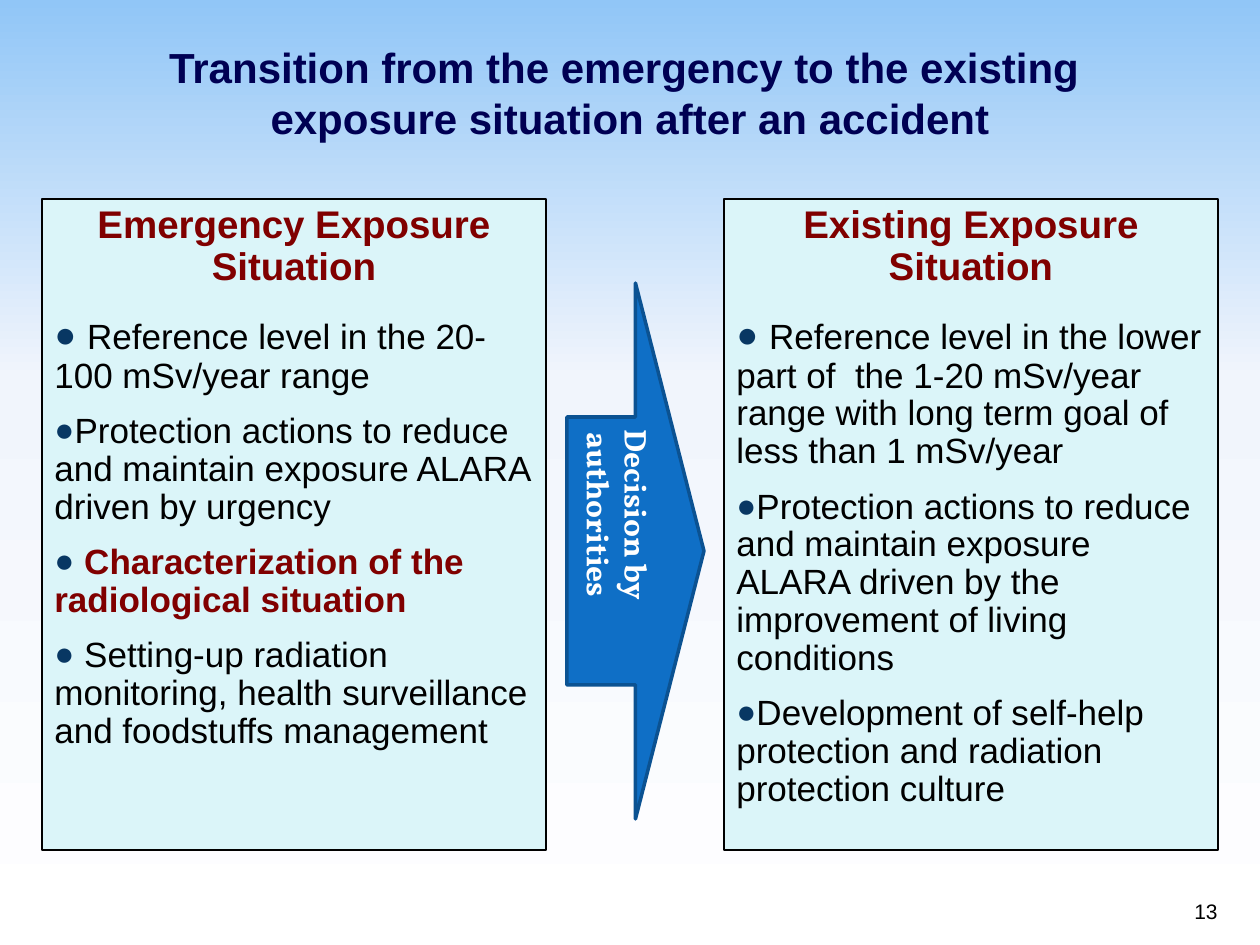
from copy import deepcopy

from lxml import etree
from pptx import Presentation
from pptx import util as u
from pptx.dml.color import RGBColor
from pptx.enum import shapes, text
from pptx.oxml.ns import qn

PX = 914400 / 126
NAVY = RGBColor(0x00, 0x00, 0x53)
MAROON = RGBColor(0x80, 0x00, 0x00)
BLACK = RGBColor(0x00, 0x00, 0x00)
WHITE = RGBColor(0xFF, 0xFF, 0xFF)
PALE = RGBColor(0xDB, 0xF5, 0xF9)
BLUE = RGBColor(0x0F, 0x6F, 0xC6)
EDGE = RGBColor(0x0B, 0x52, 0x92)
DOT = RGBColor(0x08, 0x37, 0x63)
STOPS = [(0, RGBColor(0x91, 0xC6, 0xF7)), (40, RGBColor(0xF1, 0xF5, 0xFC)), (100, WHITE)]

TITLE = dict(name="Arial", size=24, bold=True, color=NAVY)
HEAD = dict(name="Arial", size=22, bold=True, color=MAROON)
BODY = dict(name="Arial", size=20, bold=False, color=BLACK)
KEY = dict(BODY, bold=True, color=MAROON)
LEAD = dict(BODY, size=22)
ARROW = dict(name="Vollkorn", size=18, bold=True, color=WHITE)
PAGE = dict(BODY, size=12)

EMERGENCY = [
    [(" ", LEAD), ("Reference level in the 20-100 mSv/year range", BODY)],
    [("Protection actions to reduce and maintain exposure ALARA driven by urgency", BODY)],
    [(" ", BODY), ("Characterization of the radiological situation", KEY)],
    [(" Setting-up radiation monitoring, health surveillance and foodstuffs management", BODY)],
]
EXISTING = [
    [(" ", LEAD), ("Reference level in the lower part of  the 1-20 mSv/year range "
                   "with long term goal of less than 1 mSv/year", BODY)],
    [("Protection actions to reduce and maintain exposure ALARA driven by "
      "the improvement of living conditions", BODY)],
    [("Development of self-help protection and radiation protection culture", BODY)],
]


def emu(box):
    return [round(v * PX) for v in box]


def put(obj, **vals):
    for key, val in vals.items():
        setattr(obj, key, val)


def add_run(para, words, style):
    run = para.add_run()
    run.text = words
    put(run.font, name=style["name"], size=u.Pt(style["size"]), bold=style["bold"])
    run.font.color.rgb = style["color"]


def add_dot(para):
    """Give the paragraph a round coloured bullet without indent."""
    props = para._p.get_or_add_pPr()
    put_xml = etree.SubElement
    props.set("marL", "0")
    props.set("indent", "0")
    put_xml(put_xml(props, qn("a:buClr")), qn("a:srgbClr"), val=str(DOT))
    put_xml(props, qn("a:buSzPct"), val="95000")
    put_xml(props, qn("a:buFont"), typeface="Arial")
    put_xml(props, qn("a:buChar"), char="●")


def add_form(slide, kind, box, fill, line, width):
    form = slide.shapes.add_shape(kind, *emu(box))
    form.shadow.inherit = False
    form.fill.solid()
    form.fill.fore_color.rgb = fill
    form.line.color.rgb = line
    form.line.width = u.Pt(width)
    form.text_frame.word_wrap = True
    return form


def add_label(slide, box, lines, style, align, anchor, **margins):
    """Place a text box whose lines form one paragraph."""
    frame = slide.shapes.add_textbox(*emu(box)).text_frame
    put(frame, word_wrap=True, vertical_anchor=anchor, **margins)
    para = frame.paragraphs[0]
    para.alignment = align
    for i, words in enumerate(lines):
        if i:
            para.add_line_break()
        add_run(para, words, style)


def add_panel(slide, box, head, items):
    panel = add_form(slide, shapes.MSO_SHAPE.RECTANGLE, box, PALE, BLACK, 0.75)
    frame = panel.text_frame
    frame.vertical_anchor = text.MSO_ANCHOR.TOP
    para = frame.paragraphs[0]
    put(para, alignment=text.PP_ALIGN.CENTER, line_spacing=0.9, space_after=u.Pt(12))
    add_run(para, head, HEAD)
    for item in items:
        para = frame.add_paragraph()
        add_dot(para)
        put(para, alignment=text.PP_ALIGN.LEFT, line_spacing=0.9,
            space_before=u.Pt(4), space_after=u.Pt(6))
        for words, style in item:
            add_run(para, words, style)


def add_arrow(slide, box, lines):
    """Place the right arrow with its text turned to run downwards."""
    arrow = add_form(slide, shapes.MSO_SHAPE.RIGHT_ARROW, box, BLUE, EDGE, 2)
    frame = arrow.text_frame
    frame.vertical_anchor = text.MSO_ANCHOR.MIDDLE
    frame._txBody.bodyPr.set("vert", "eaVert")
    for i, words in enumerate(lines):
        para = frame.add_paragraph() if i else frame.paragraphs[0]
        para.alignment = text.PP_ALIGN.CENTER
        add_run(para, words, ARROW)


def paint_back(slide):
    fill = slide.background.fill
    fill.gradient()
    fill.gradient_angle = 270
    marks = fill._fill._gradFill.find(qn("a:gsLst"))
    marks.append(deepcopy(marks[-1]))
    for mark, (pos, color) in zip(marks, STOPS):
        mark.set("pos", str(pos * 1000))
        for child in list(mark):
            mark.remove(child)
        etree.SubElement(mark, qn("a:srgbClr"), val=str(color))


def main():
    deck = Presentation()
    put(deck, slide_width=u.Inches(10), slide_height=u.Inches(7.5))
    slide = deck.slides.add_slide(deck.slide_layouts[6])
    paint_back(slide)
    add_label(slide, (0, 21, 1260, 136),
              ["Transition from the emergency to the existing ",
               "exposure situation after an accident"],
              TITLE, text.PP_ALIGN.CENTER, text.MSO_ANCHOR.MIDDLE,
              margin_left=0, margin_right=0, margin_bottom=0)
    add_panel(slide, (42, 199, 504, 651), "Emergency Exposure Situation", EMERGENCY)
    add_panel(slide, (724, 199, 494, 651), "Existing Exposure Situation", EXISTING)
    add_arrow(slide, (567, 283, 137, 536), ["Decision by", "authorities"])
    add_label(slide, (968, 867, 262, 63), ["13"], PAGE,
              text.PP_ALIGN.RIGHT, text.MSO_ANCHOR.BOTTOM)
    deck.save("out.pptx")


if __name__ == "__main__":
    main()
